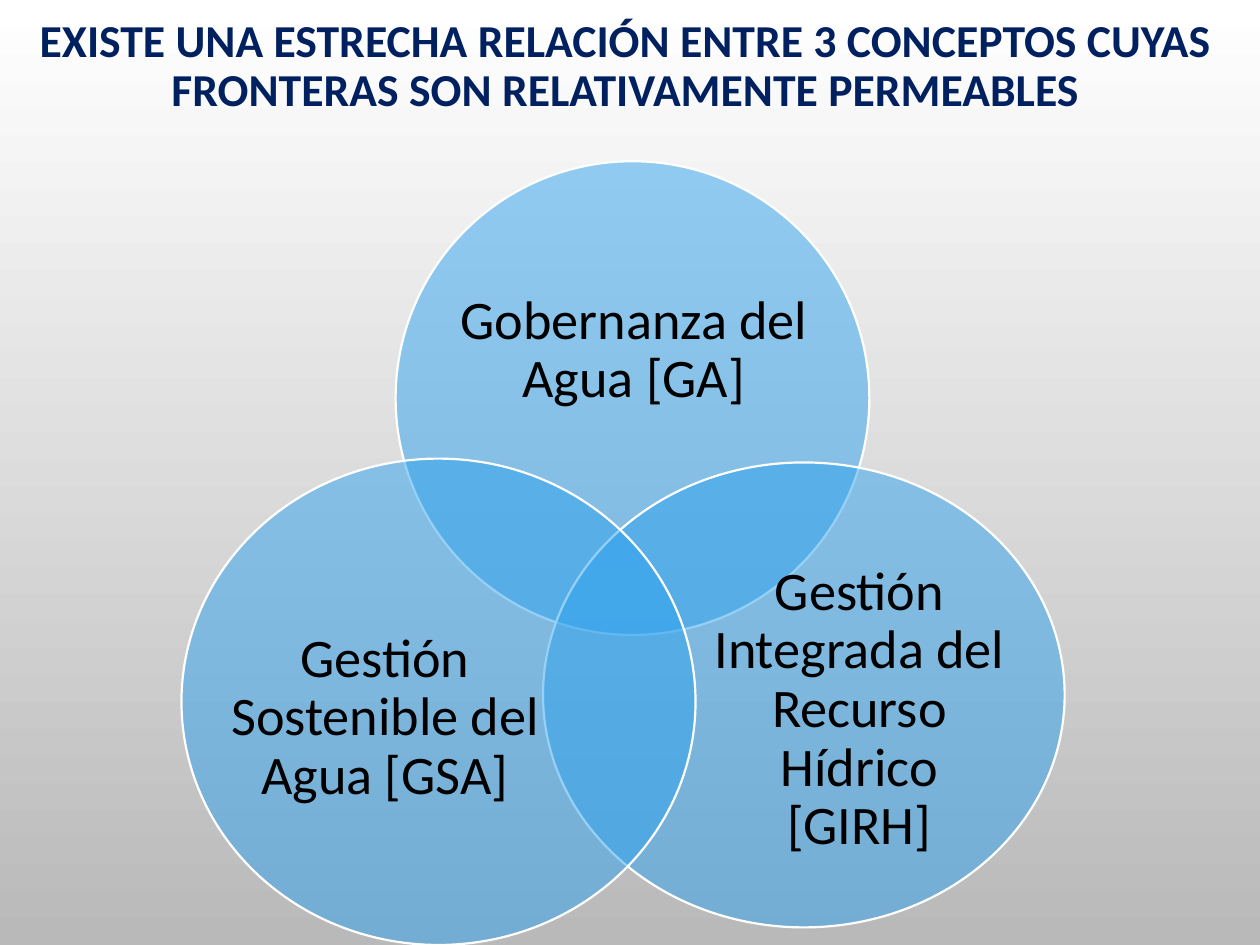
from dataclasses import dataclass

from lxml.etree import SubElement
from pptx import Presentation
from pptx.dml.color import RGBColor
from pptx.enum.shapes import MSO_SHAPE
from pptx.enum.text import MSO_ANCHOR, PP_ALIGN
from pptx.oxml.ns import qn
from pptx.util import Inches, Pt


@dataclass(frozen=True)
class Theme:
    font: str = "Calibri"
    title_size: float = 26.1
    label_size: float = 31
    title_color: str = "002060"
    label_color: str = "000000"
    circle_fill: str = "2FA3EE"
    circle_opacity: int = 50
    circle_line: str = "FFFFFF"
    line_width: float = 1.25
    background_top: str = "FFFFFF"
    background_bottom: str = "B9B9B9"


THEME = Theme()

TITLE = ("EXISTE UNA ESTRECHA RELACIÓN ENTRE 3 CONCEPTOS CUYAS "
         "FRONTERAS SON RELATIVAMENTE PERMEABLES")

# Label, circle area, label area (left, top, width, height), back to front
CONCEPTS = [
    ("Gobernanza del Agua [GA]",
     (3.14, 1.28, 3.76, 3.76), (3.65, 1.94, 2.76, 1.69)),
    ("Gestión Integrada del Recurso Hídrico [GIRH]",
     (4.31, 3.67, 4.14, 3.69), (5.58, 4.62, 2.48, 2.03)),
    ("Gestión Sostenible del Agua [GSA]",
     (1.44, 3.64, 4.08, 3.86), (1.83, 4.64, 2.45, 2.12)),
]


def paint_background(page):
    fill = page.background.fill
    fill.gradient()
    fill.gradient_angle = 270  # counter-clockwise, so top to bottom
    colors = (THEME.background_top, THEME.background_bottom)
    for stop, position, color in zip(fill.gradient_stops, (0, 1), colors):
        stop.position = position
        stop.color.rgb = RGBColor.from_string(color)


def add_text(shapes, text, area, size, color, bold=False, inset=None):
    """Add centred text; inset, if given, replaces the default margins."""
    box = shapes.add_textbox(*map(Inches, area))
    frame = box.text_frame
    frame.word_wrap = True
    frame.vertical_anchor = MSO_ANCHOR.MIDDLE
    if inset is not None:
        frame.margin_left = frame.margin_right = Inches(inset)
        frame.margin_top = frame.margin_bottom = Inches(inset)
    para = frame.paragraphs[0]
    para.alignment = PP_ALIGN.CENTER
    para.line_spacing = 0.9
    span = para.add_run()
    span.text = text
    span.font.name = THEME.font
    span.font.size = Pt(size)
    span.font.bold = bold
    span.font.color.rgb = RGBColor.from_string(color)


def add_circle(shapes, area):
    """Add a see-through ellipse with a thin outline."""
    circle = shapes.add_shape(MSO_SHAPE.OVAL, *map(Inches, area))
    circle.shadow.inherit = False
    circle.fill.solid()
    circle.fill.fore_color.rgb = RGBColor.from_string(THEME.circle_fill)
    color = circle.fill._xPr.find(qn("a:solidFill"))[0]
    SubElement(color, qn("a:alpha"), val=str(THEME.circle_opacity * 1000))
    circle.line.color.rgb = RGBColor.from_string(THEME.circle_line)
    circle.line.width = Pt(THEME.line_width)


def add_venn(page):
    venn = page.shapes.add_group_shape()
    for label, circle_area, label_area in CONCEPTS:
        add_circle(venn.shapes, circle_area)
        add_text(venn.shapes, label, label_area,
                 THEME.label_size, THEME.label_color, inset=0)


def main():
    deck = Presentation()
    deck.slide_width = Inches(10)
    deck.slide_height = Inches(7.5)
    page = deck.slides.add_slide(deck.slide_layouts[6])
    paint_background(page)
    add_text(page.shapes, TITLE, (0.2, 0, 9.53, 1.07),
             THEME.title_size, THEME.title_color, bold=True)
    add_venn(page)
    deck.save("out.pptx")


if __name__ == "__main__":
    main()
